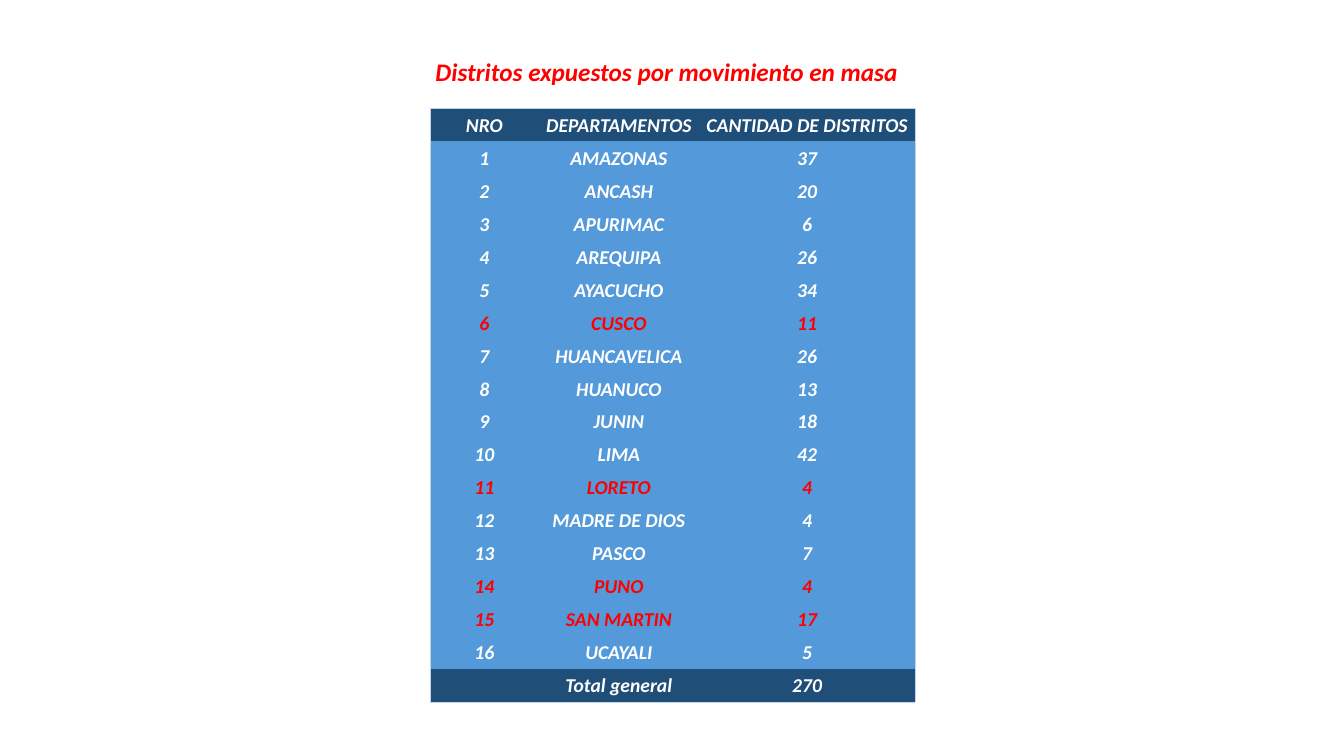
from lxml.etree import SubElement
from pptx import Presentation
from pptx.dml.color import RGBColor
from pptx.enum.text import MSO_ANCHOR, PP_ALIGN
from pptx.oxml.ns import qn
from pptx.util import Pt

WHITE, RED = "FFFFFF", "FF0000"
NAVY, BLUE, EDGE = "1F4E79", "5499DA", "C4D5EB"
HEAD = ("NRO", "DEPARTAMENTOS", "CANTIDAD DE DISTRITOS")
COUNTS = {
    "AMAZONAS": 37, "ANCASH": 20, "APURIMAC": 6, "AREQUIPA": 26,
    "AYACUCHO": 34, "CUSCO": 11, "HUANCAVELICA": 26, "HUANUCO": 13,
    "JUNIN": 18, "LIMA": 42, "LORETO": 4, "MADRE DE DIOS": 4,
    "PASCO": 7, "PUNO": 4, "SAN MARTIN": 17, "UCAYALI": 5,
}
TOTAL = ("", "Total general", 270)
MARKED = {"CUSCO", "LORETO", "PUNO", "SAN MARTIN"}
WIDTHS = (77.2, 115, 154)
HEIGHT = 23.57


def color(code):
    return RGBColor.from_string(code)


def write(frame, text, size, code, align=PP_ALIGN.CENTER):
    para = frame.paragraphs[0]
    para.text = text
    para.alignment = align
    font = para.font
    font.name, font.size = "Calibri", Pt(size)
    font.bold = font.italic = True
    font.color.rgb = color(code)


def add_title(slide, text):
    box = slide.shapes.add_textbox(Pt(304), Pt(36.7), Pt(353), Pt(29))
    box.text_frame.word_wrap = True
    write(box.text_frame, text, 18, RED, PP_ALIGN.LEFT)


def add_edge(cell, side, shown):
    line = SubElement(cell._tc.get_or_add_tcPr(), qn(f"a:ln{side}"), w=str(Pt(0.5)))
    if shown:
        fill = SubElement(line, qn("a:solidFill"))
        SubElement(fill, qn("a:srgbClr"), val=EDGE)
    else:
        SubElement(line, qn("a:noFill"))


def fill_cell(cell, text, ink, back, edges):
    for side in "LRTB":
        add_edge(cell, side, side in edges)
    cell.fill.solid()
    cell.fill.fore_color.rgb = color(back)
    cell.margin_left = cell.margin_right = cell.margin_top = Pt(0.7)
    cell.margin_bottom = 0
    cell.vertical_anchor = MSO_ANCHOR.MIDDLE
    write(cell.text_frame, text, 14, ink)


def add_grid(slide, rows):
    last, end = len(rows) - 1, len(WIDTHS) - 1
    frame = slide.shapes.add_table(
        len(rows), len(WIDTHS), Pt(307.4), Pt(77.5),
        Pt(sum(WIDTHS)), Pt(HEIGHT * len(rows)))
    table = frame.table
    table.first_row = table.horz_banding = False
    for column, width in zip(table.columns, WIDTHS):
        column.width = Pt(width)
    for r, row in enumerate(rows):
        table.rows[r].height = Pt(HEIGHT)
        ink = RED if row[1] in MARKED else WHITE
        back = NAVY if r in (0, last) else BLUE
        for c, text in enumerate(row):
            outer = {"L": c == 0, "R": c == end, "T": r == 0, "B": r == last}
            edges = [side for side, shown in outer.items() if shown]
            fill_cell(table.cell(r, c), str(text), ink, back, edges)


def main():
    deck = Presentation()
    deck.slide_width, deck.slide_height = Pt(960), Pt(540)
    slide = deck.slides.add_slide(deck.slide_layouts[6])
    add_title(slide, "Distritos expuestos por movimiento en masa")
    body = [(n, *item) for n, item in enumerate(COUNTS.items(), 1)]
    add_grid(slide, [HEAD, *body, TOTAL])
    deck.save("out.pptx")


if __name__ == "__main__":
    main()
